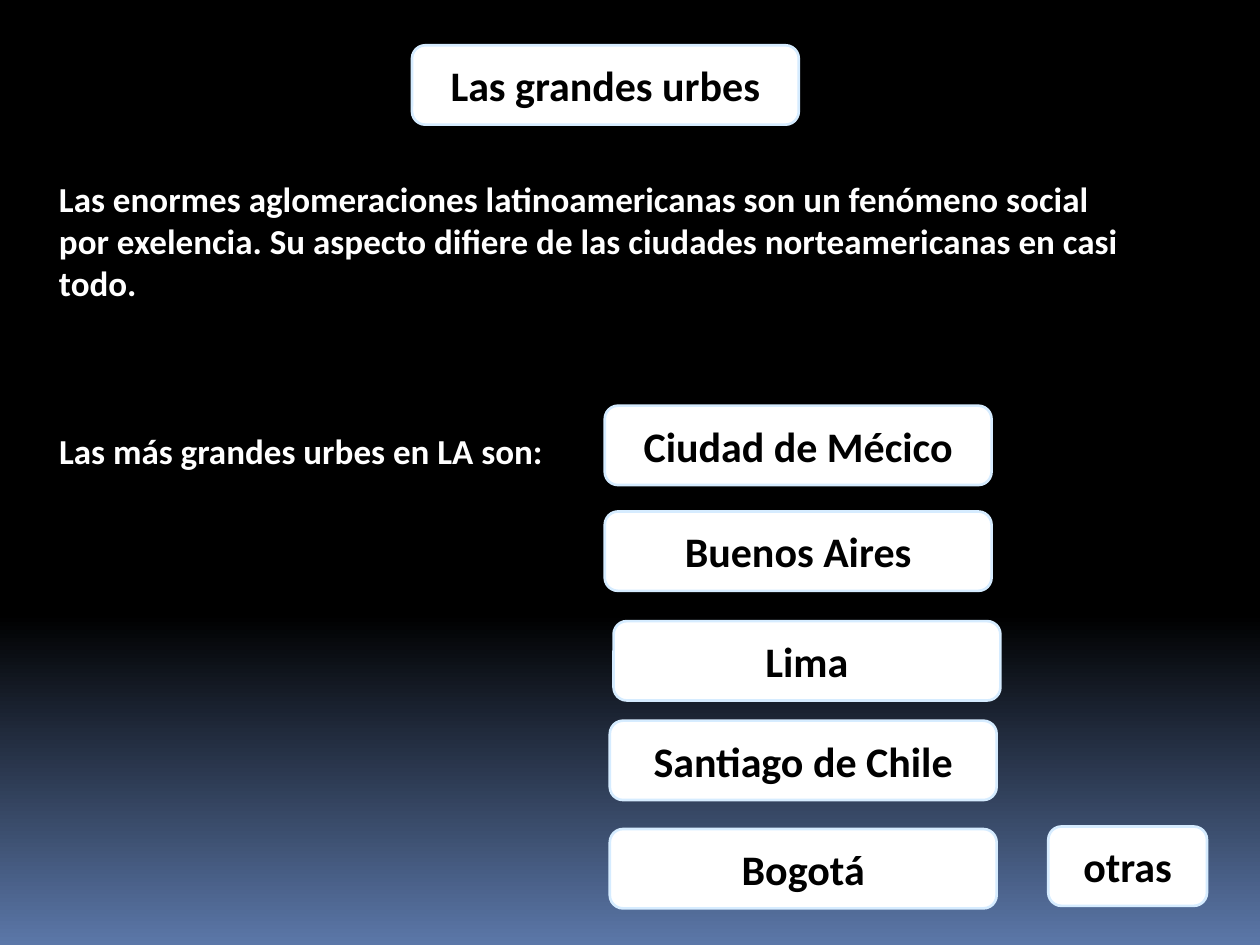
from pptx import Presentation
from pptx.dml.color import RGBColor
from pptx.enum.shapes import MSO_SHAPE
from pptx.enum.text import MSO_ANCHOR, MSO_AUTO_SIZE, PP_ALIGN
from pptx.util import Inches, Pt

ROUNDED = MSO_SHAPE.ROUNDED_RECTANGLE
MIDDLE, TOP = MSO_ANCHOR.MIDDLE, MSO_ANCHOR.TOP
FIXED, GROW = MSO_AUTO_SIZE.NONE, MSO_AUTO_SIZE.SHAPE_TO_FIT_TEXT
CENTER, LEFT = PP_ALIGN.CENTER, PP_ALIGN.LEFT

# Content: cards and notes with their positions in inches
TITLE = "Las grandes urbes"
TITLE_AT = (3.27, 0.36)
CITIES = [
    ("Ciudad de Mécico", 4.8, 3.22),
    ("Buenos Aires", 4.8, 4.06),
    ("Lima", 4.87, 4.93),
    ("Santiago de Chile", 4.84, 5.72),
    ("Bogotá", 4.84, 6.58),
]
OTHERS = ("otras", 8.32, 6.56)
NOTES = [
    (["Las enormes aglomeraciones latinoamericanas son un fenómeno social",
      "por exelencia. Su aspecto difiere de las ciudades norteamericanas en casi",
      "todo."], (0.37, 1.36, 8.94, 1.11)),
    (["Las más grandes urbes en LA son:"], (0.37, 3.36, 4.31, 0.44)),
]
CARD_WIDTH, OTHERS_WIDTH, CARD_HEIGHT = 3.07, 1.26, 0.63

THEME = {
    "sky": [(0.65, RGBColor(0, 0, 0)), (1, RGBColor(0x5B, 0x77, 0xA8))],
    "card": RGBColor(255, 255, 255),
    "edge": RGBColor(0xD6, 0xEC, 0xFF),
    "edge_width": Pt(1.5),
    "card_font": {"name": "Calibri", "size": Pt(24), "bold": True},
    "card_ink": RGBColor(0, 0, 0),
    "note_font": {"name": "Calibri", "size": Pt(20), "bold": True},
    "note_ink": RGBColor(255, 255, 255),
}
CARD_FRAME = {"word_wrap": True, "auto_size": FIXED, "vertical_anchor": MIDDLE}
NOTE_FRAME = {"word_wrap": False, "auto_size": GROW, "vertical_anchor": TOP}


def set_all(target, values):
    for name, value in values.items():
        setattr(target, name, value)


def write(frame, lines, role, frame_format, align):
    frame.text = "\n".join(lines)
    set_all(frame, frame_format)
    for paragraph in frame.paragraphs:
        paragraph.alignment = align
        for run in paragraph.runs:
            set_all(run.font, THEME[role + "_font"])
            run.font.color.rgb = THEME[role + "_ink"]


def add_card(slide, left, top, width=CARD_WIDTH):
    box = [Inches(v) for v in (left, top, width, CARD_HEIGHT)]
    card = slide.shapes.add_shape(ROUNDED, *box)
    card.shadow.inherit = False
    card.fill.solid()
    card.fill.fore_color.rgb = THEME["card"]
    card.line.color.rgb = THEME["edge"]
    card.line.width = THEME["edge_width"]
    return card


def main():
    deck = Presentation()
    deck.slide_width, deck.slide_height = Inches(10), Inches(7.5)
    slide = deck.slides.add_slide(deck.slide_layouts[5])

    # Background: black fading to blue at the bottom
    sky = slide.background.fill
    sky.gradient()
    sky.gradient_angle = 270
    for stop, (position, color) in zip(sky.gradient_stops, THEME["sky"]):
        stop.position = position
        stop.color.rgb = color

    # Title on its card, raised above it
    plate = add_card(slide, *TITLE_AT)
    title = slide.shapes.title
    for side in ("left", "top", "width", "height"):
        setattr(title, side, getattr(plate, side))
    write(title.text_frame, [TITLE], "card", CARD_FRAME, CENTER)
    plate.element.addnext(title.element)

    # Notes
    for lines, box in NOTES:
        note = slide.shapes.add_textbox(*[Inches(v) for v in box])
        write(note.text_frame, lines, "note", NOTE_FRAME, LEFT)

    # City cards
    cards = [(*city, CARD_WIDTH) for city in CITIES] + [(*OTHERS, OTHERS_WIDTH)]
    for name, left, top, width in cards:
        card = add_card(slide, left, top, width)
        write(card.text_frame, [name], "card", CARD_FRAME, CENTER)

    deck.save("out.pptx")


if __name__ == "__main__":
    main()
